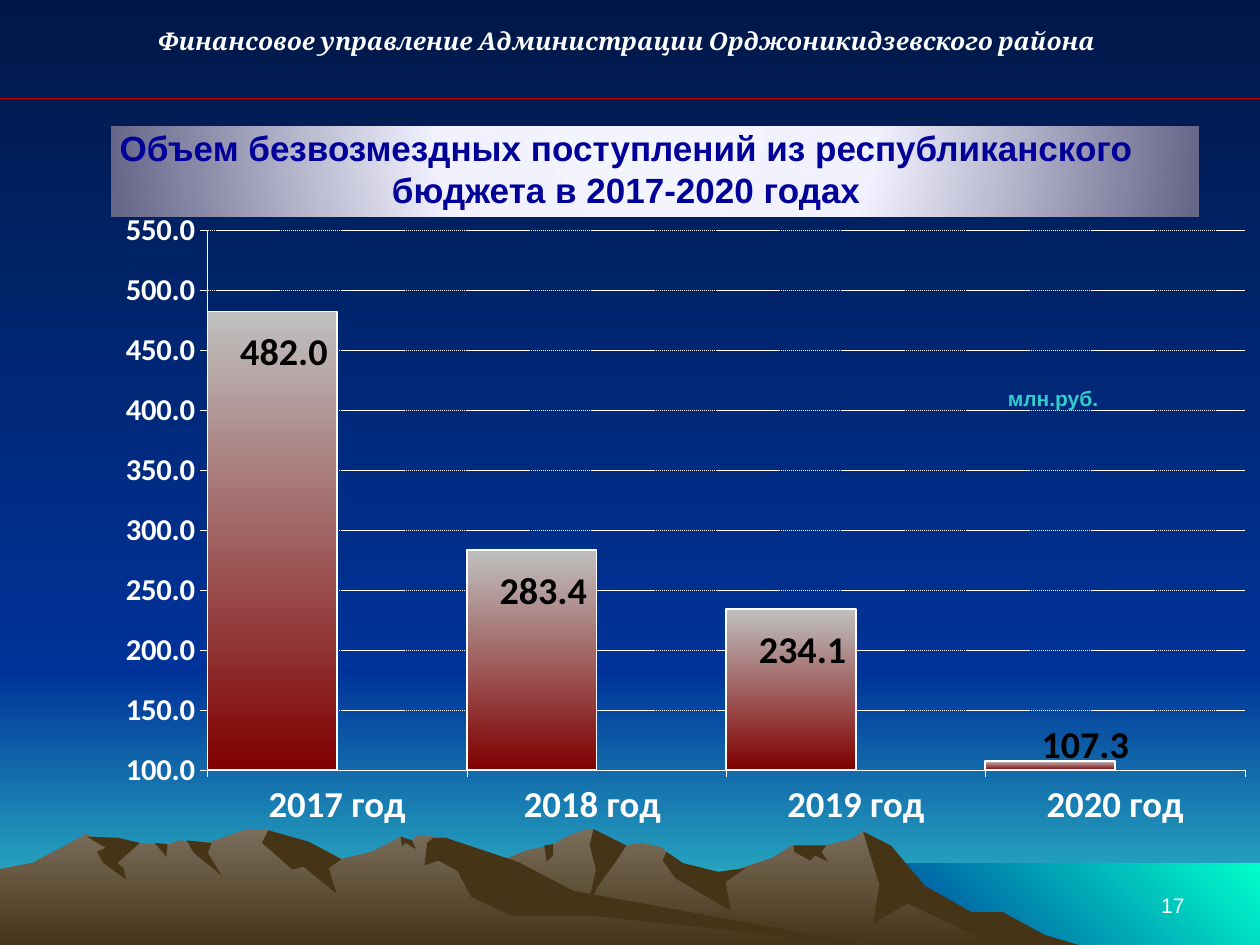
import pptx
import pptx.chart.data
import pptx.dml.color
import pptx.enum.chart
import pptx.enum.dml
import pptx.enum.shapes
import pptx.enum.text
import pptx.oxml
import pptx.oxml.ns
import pptx.util

Inches, Pt = pptx.util.Inches, pptx.util.Pt
qn, nsdecls, parse_xml = pptx.oxml.ns.qn, pptx.oxml.ns.nsdecls, pptx.oxml.parse_xml
Align, Anchor = pptx.enum.text.PP_ALIGN, pptx.enum.text.MSO_ANCHOR
Place = pptx.enum.chart.XL_LABEL_POSITION

# Page and colours
WIDE, HIGH = 10, 7.5
WHITE, BLACK, RED, EARTH = "FFFFFF", "000000", "C00000", "463416"
NIGHT, NAVY, BLUE, TEAL, MINT = "001848", "000099", "003399", "33CCCC", "00FFCC"

# Gradients: first colour, last colour, clockwise angle
SKY, GLOW, SEA = (NIGHT, BLUE, 90), (BLUE, TEAL, 90), (BLUE, MINT, 315)
SLOPE, BAR = ("7A6E5C", EARTH, 90), ("C0C0C0", "800000", 90)

# Texts: words, box, colour, alignment, anchor, font
TEXTS = [
    ("17", (7.17, 6.83, 2.33, 0.5), WHITE, Align.RIGHT, Anchor.BOTTOM,
     dict(name="Arial", size=Pt(12))),
    ("Финансовое управление Администрации Орджоникидзевского района",
     (0.86, 0.16, 8.23, 0.57), WHITE, Align.CENTER, Anchor.TOP,
     dict(name="Cambria", size=Pt(14), bold=True, italic=True)),
    ("млн.руб.", (7.9, 3.01, 1.52, 0.3), TEAL, Align.LEFT, Anchor.TOP,
     dict(name="Arial", size=Pt(12), bold=True)),
]
TITLE = ("Объем безвозмездных поступлений из республиканского бюджета в 2017-2020 годах",
         (0.32, 0.95, 9.3, 0.77), NAVY, Align.CENTER, Anchor.TOP,
         dict(name="Arial", size=Pt(20), bold=True))

# Chart
SUMS = {"2017 год": 482.0, "2018 год ": 283.4, "2019 год": 234.1, "2020 год": 107.3}
LOW, TOP, STEP = 100, 550, 50
FACE = dict(name="Calibri", bold=True)

# Mountains in hundredths of an inch. A crest runs from left to right and
# is closed along the foot of the page; a shade is a closed outline.
FOOT = 750
CRESTS = {
    "right": [(258, 750), (277, 739), (327, 709), (355, 698), (394, 685), (418, 675),
              (438, 671), (450, 664), (465, 658), (471, 658), (486, 673), (509, 669),
              (526, 673), (536, 690), (566, 697), (613, 681), (629, 671), (656, 671),
              (676, 666), (685, 660), (702, 671), (723, 698), (764, 723), (820, 750)],
    "left": [(0, 690), (26, 685), (56, 669), (68, 662), (94, 671), (111, 669),
             (132, 671), (143, 667), (160, 671), (196, 658), (212, 658), (223, 663),
             (236, 681), (260, 676), (271, 682), (296, 676), (318, 664), (327, 668),
             (331, 663), (354, 665), (432, 712), (667, 748), (690, 750)],
}
SHADES = {
    "right": [
        [(796, 724), (771, 724), (734, 703), (707, 671), (685, 660), (691, 680), (698, 702),
         (693, 733), (720, 717), (790, 750), (856, 750), (829, 742)],
        [(471, 658), (468, 671), (473, 690), (465, 727), (474, 704), (490, 682), (497, 671)],
        [(529, 676), (526, 683), (536, 697), (580, 723), (576, 700), (592, 689),
         (570, 692), (542, 685)],
        [(630, 671), (630, 676), (643, 683), (647, 679), (657, 684), (652, 676), (656, 671)],
        [(432, 671), (439, 670), (439, 679), (434, 684)],
    ],
    "left": [
        [(213, 659), (208, 669), (232, 690), (241, 688), (267, 709), (261, 689),
         (271, 682), (245, 668)],
        [(354, 665), (344, 665), (339, 669), (337, 687), (348, 683), (363, 691), (374, 712),
         (407, 727), (472, 727), (690, 750), (455, 707), (411, 684)],
        [(318, 664), (327, 667), (330, 674), (322, 669), (319, 672)],
        [(148, 667), (168, 669), (165, 677), (176, 695), (154, 677)],
        [(123, 669), (133, 670), (132, 680)],
        [(111, 669), (93, 685), (98, 689), (100, 698), (82, 685), (77, 676), (84, 673),
         (69, 664), (94, 665)],
    ],
}


def color(code):
    return pptx.dml.color.RGBColor.from_string(code)


def box(place):
    return [Inches(n) for n in place]


def style(font, code, fmt):
    for key, val in fmt.items():
        setattr(font, key, val)
    font.color.rgb = color(code)


def paint(fill, look):
    """Fill with one colour or with a gradient."""
    if isinstance(look, str):
        fill.solid()
        fill.fore_color.rgb = color(look)
        return
    *codes, angle = look
    fill.gradient()
    fill.gradient_angle = 360 - angle
    for stop, code in zip(fill.gradient_stops, codes):
        stop.color.rgb = color(code)


def edge(line, code, width):
    line.color.rgb = color(code)
    line.width = Pt(width)


def plain(shape, look):
    paint(shape.fill, look)
    shape.line.fill.background()
    shape.shadow.inherit = False
    return shape


def panel(shapes, place, look):
    kind = pptx.enum.shapes.MSO_SHAPE.RECTANGLE
    return plain(shapes.add_shape(kind, *box(place)), look)


def outline(shapes, points, look):
    pen = shapes.build_freeform(*points[0], scale=Inches(0.01))
    pen.add_line_segments(points[1:], close=True)
    plain(pen.convert_to_shape(), look)


def write(shape, words, code, align, anchor, fmt):
    frame = shape.text_frame
    frame.word_wrap, frame.vertical_anchor = True, anchor
    para = frame.paragraphs[0]
    para.alignment = align
    run = para.add_run()
    run.text = words
    style(run.font, code, fmt)


def layout(**parts):
    """Manual chart layout from its parts, given in schema order."""
    inner = "".join(f'<c:{key} val="{val}"/>' for key, val in parts.items())
    return parse_xml(f'<c:layout {nsdecls("c")}><c:manualLayout>{inner}'
                     '</c:manualLayout></c:layout>')


def scenery(slide):
    shore, split = 6.85, 5.33
    paint(slide.background.fill, SKY)
    panel(slide.shapes, (0, split, WIDE, HIGH - split), GLOW)
    panel(slide.shapes, (0, 0, WIDE, split), SKY)
    panel(slide.shapes, (6.83, shore, 3.17, HIGH - shore), SEA)
    for side, crest in CRESTS.items():
        foot = [(crest[-1][0], FOOT), (crest[0][0], FOOT)]
        outline(slide.shapes, crest + foot, SLOPE)
        for shade in SHADES[side]:
            outline(slide.shapes, shade, EARTH)


def rule(shapes, y):
    kind = pptx.enum.shapes.MSO_CONNECTOR.STRAIGHT
    line = shapes.add_connector(kind, 0, Inches(y), Inches(WIDE), Inches(y))
    edge(line.line, RED, 0.75)
    line.element.spPr.append(parse_xml(f'<a:effectLst {nsdecls("a")}/>'))


def heading(shapes):
    """Title on a banner that is light in the middle and dark at both ends."""
    banner = panel(shapes, (0.88, 1, 8.64, 0.72), WHITE)
    stops = "".join(f'<a:gs pos="{pos}000"><a:srgbClr val="{code}"/></a:gs>'
                    for pos, code in [(0, "F4F4FF"), (40, "F1F1FF"), (100, "666689")])
    props = banner.element.spPr
    props.replace(props.find(qn("a:solidFill")), parse_xml(
        f'<a:gradFill {nsdecls("a")}><a:gsLst>{stops}</a:gsLst><a:path path="circle">'
        '<a:fillToRect l="50000" t="-80000" r="50000" b="180000"/></a:path></a:gradFill>'))
    title = shapes.title
    title.left, title.top, title.width, title.height = box(TITLE[1])
    write(title, TITLE[0], *TITLE[2:])
    banner.element.addnext(title.element)


def axes(chart):
    for axis, size in ((chart.category_axis, 21), (chart.value_axis, 17.5)):
        axis.major_tick_mark = pptx.enum.chart.XL_TICK_MARK.OUTSIDE
        style(axis.tick_labels.font, WHITE, dict(FACE, size=Pt(size)))
        edge(axis.format.line, WHITE, 0.27)
    chart.category_axis.tick_label_position = pptx.enum.chart.XL_TICK_LABEL_POSITION.LOW
    scale = chart.value_axis
    for key, val in dict(minimum_scale=LOW, maximum_scale=TOP, major_unit=STEP).items():
        setattr(scale, key, val)
    scale.tick_labels.number_format = "0.0"
    scale.tick_labels.number_format_is_linked = False
    grid = scale.major_gridlines.format.line
    edge(grid, WHITE, 0.27)
    grid.dash_style = pptx.enum.dml.MSO_LINE.SQUARE_DOT


def labels(bars):
    """Values go inside tall bars and above a low one, without leader lines."""
    for i, total in enumerate(SUMS.values()):
        tall = total > LOW + STEP
        label = bars.points[i].data_label
        style(label.font, BLACK, dict(FACE, size=Pt(21.8)))
        label.position = Place.INSIDE_END if tall else Place.OUTSIDE_END
        mark = bars.data_labels._element.findall(qn("c:dLbl"))[i]
        mark.find(qn("c:idx")).addnext(layout(x=0.01 if tall else 0.03, y=0.02))
    group = bars.data_labels._element
    for lead in group.findall(qn("c:showLeaderLines")):
        lead.set("val", "0")
    group.append(parse_xml(
        f'<c:extLst {nsdecls("c")}><c:ext uri="{{CE6537A1-D6FC-4f65-9D91-7224C49458BB}}" '
        'xmlns:c15="http://schemas.microsoft.com/office/drawing/2012/chart">'
        '<c15:showLeaderLines val="0"/></c:ext></c:extLst>'))


def columns(shapes):
    data = pptx.chart.data.CategoryChartData(number_format="0.0")
    data.categories = list(SUMS)
    data.add_series("Series 1", SUMS.values())
    data.add_series("Series 2", [None] * len(SUMS))  # keeps the right half of a year free
    kind = pptx.enum.chart.XL_CHART_TYPE.COLUMN_CLUSTERED
    chart = shapes.add_chart(kind, *box((0.77, 1.68, 9.23, 5.17)), data).chart
    chart.has_legend = chart.has_title = False
    style(chart.font, WHITE, dict(FACE, size=Pt(21)))
    plot = chart.plots[0]
    plot.gap_width, plot.overlap, plot.vary_by_categories = 0, 0, False
    area = chart.element.find(".//" + qn("c:plotArea"))
    for old in area.findall(qn("c:layout")):
        area.remove(old)
    area.insert(0, layout(layoutTarget="inner", xMode="edge", yMode="edge",
                          x=0.095, y=0.02, w=0.892, h=0.836))
    axes(chart)
    for bars, look in zip(plot.series, (BAR, MINT)):
        bars.invert_if_negative = False
        paint(bars.format.fill, look)
        edge(bars.format.line, WHITE, 1.09)
    labels(plot.series[0])


def main():
    deck = pptx.Presentation()
    deck.slide_width, deck.slide_height = Inches(WIDE), Inches(HIGH)
    slide = deck.slides.add_slide(deck.slide_layouts[5])
    scenery(slide)
    rule(slide.shapes, 0.78)
    heading(slide.shapes)
    columns(slide.shapes)
    for words, place, *look in TEXTS:
        write(slide.shapes.add_textbox(*box(place)), words, *look)
    deck.save("out.pptx")


if __name__ == "__main__":
    main()
